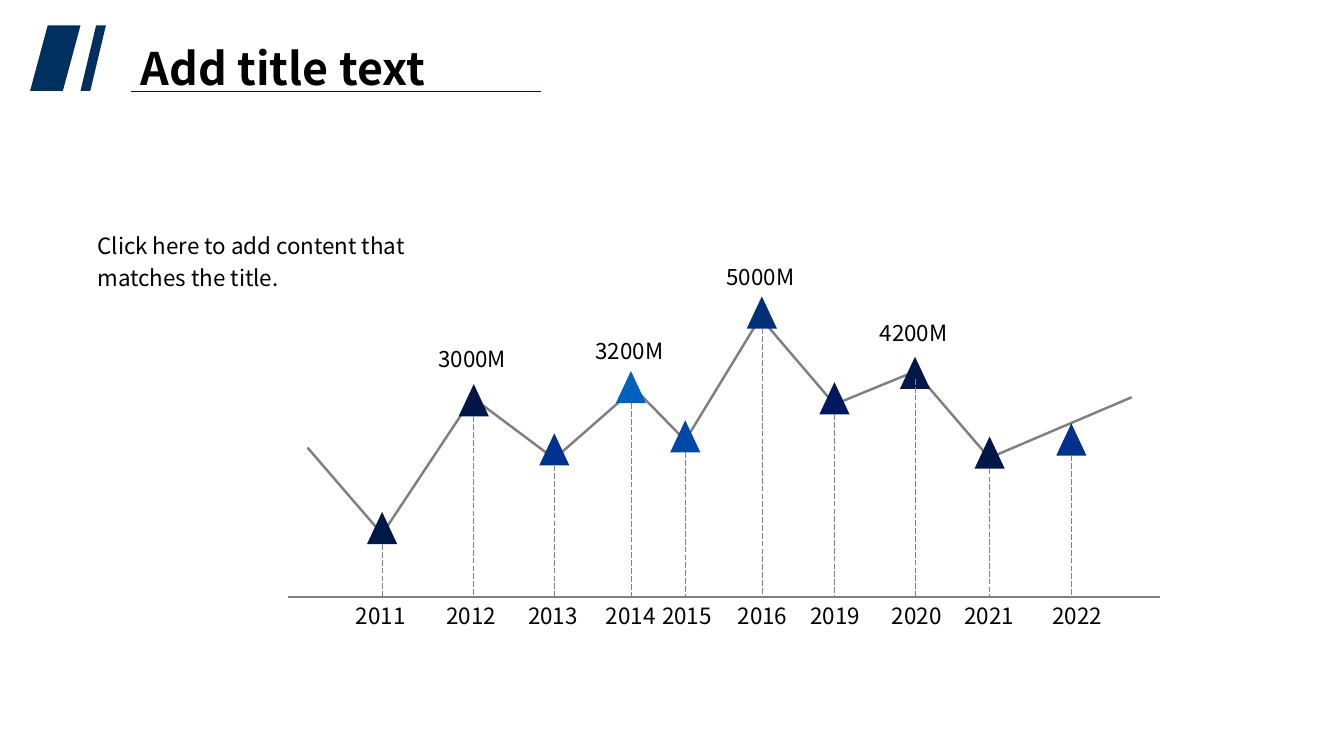
from itertools import pairwise

from lxml.etree import SubElement
from pptx import Presentation
from pptx.dml.color import RGBColor
from pptx.enum.dml import MSO_LINE
from pptx.enum.shapes import MSO_CONNECTOR, MSO_SHAPE
from pptx.enum.text import MSO_AUTO_SIZE
from pptx.oxml.ns import qn
from pptx.util import Cm, Pt

FONT = "Noto Sans CJK SC"
COLORS = {
    "black": "000000", "gray": "808080", "brand": "003060",
    "night": "001848", "ink": "001748", "deep": "001860", "navy": "003078",
    "royal": "003090", "blue": "0048A8", "bright": "0060C0",
}

# Lengths in cm
AXIS_Y = 15.04
MARKER_W, MARKER_H = 0.76, 0.81
LABEL_H = 1.02
# year, marker centre x, marker top, marker colour, left of year label
MARKERS = [
    ("2011", 9.63, 12.9, "night", 8.64),
    ("2012", 11.94, 9.68, "ink", 10.92),
    ("2013", 13.97, 10.92, "royal", 12.98),
    ("2014", 15.9, 9.35, "bright", 14.94),
    ("2015", 17.27, 10.59, "blue", 16.36),
    ("2016", 19.2, 7.47, "navy", 18.26),
    ("2019", 21.03, 9.63, "deep", 20.09),
    ("2020", 23.06, 8.99, "night", 22.15),
    ("2021", 24.94, 11.0, "ink", 23.98),
    ("2022", 27.0, 10.67, "royal", 26.19),
]
# Where a drop line starts inside its marker instead of at its base
DROP_TOPS = {"2020": 9.55}
TREND = [
    (7.75, 11.28), (9.63, 13.46), (11.91, 10.02), (13.97, 11.56),
    (15.99, 9.79), (17.27, 11.1), (19.16, 8.0), (21.03, 10.19),
    (23.06, 9.36), (24.93, 11.54), (28.52, 10.01),
]
# value, left, top
VALUES = [
    ("3000M", 10.72, 8.53), ("3200M", 14.68, 8.31),
    ("5000M", 17.98, 6.45), ("4200M", 21.84, 7.87),
]


def rgb(name):
    return RGBColor.from_string(COLORS[name])


def add_line(s, start, end, color="gray", width=1.75, dash=None):
    line = s.shapes.add_connector(
        MSO_CONNECTOR.STRAIGHT, *(Cm(v) for v in (*start, *end)))
    line.line.color.rgb = rgb(color)
    line.line.width = Pt(width)
    if dash:
        line.line.dash_style = dash
    SubElement(line._element.spPr, qn("a:effectLst"))


def add_solid(s, kind, box, color, adj=None):
    """Add a filled preset shape without outline."""
    sp = s.shapes.add_shape(kind, *(Cm(v) for v in box))
    sp.shadow.inherit = False
    sp.fill.solid()
    sp.fill.fore_color.rgb = rgb(color)
    sp.line.fill.background()
    if adj is not None:
        sp.adjustments[0] = adj


def add_text(s, text, box, size=16, bold=False, wrap=False, spacing=None,
             inset=(0.33, 0.18), auto_size=MSO_AUTO_SIZE.SHAPE_TO_FIT_TEXT):
    tf = s.shapes.add_textbox(*(Cm(v) for v in box)).text_frame
    tf.word_wrap = wrap
    tf.auto_size = auto_size
    tf.margin_left = tf.margin_right = Cm(inset[0])
    tf.margin_top = tf.margin_bottom = Cm(inset[1])
    p = tf.paragraphs[0]
    p.line_spacing = spacing
    r = p.add_run()
    r.text = text
    r.font.name = FONT
    r.font.size = Pt(size)
    r.font.bold = bold
    r.font.color.rgb = rgb("black")


def add_header(s):
    add_text(s, "Add title text", (3.3, 1.04, 12.83, 1.65), size=32, bold=True,
             wrap=True, spacing=0.9, inset=(0.25, 0.13),
             auto_size=MSO_AUTO_SIZE.NONE)
    for left, width, adj in ((0.76, 1.27, 0.349), (2.03, 0.64, 0.615)):
        add_solid(s, MSO_SHAPE.PARALLELOGRAM, (left, 0.64, width, 1.65),
                  "brand", adj)
    add_line(s, (3.3, 2.31), (13.64, 2.31), "night", 0.5)


def add_timeline(s):
    add_line(s, (7.26, AXIS_Y), (29.24, AXIS_Y), width=1.5)
    for start, end in pairwise(TREND):
        add_line(s, start, end)
    for year, x, top, color, label_left in MARKERS:
        add_solid(s, MSO_SHAPE.ISOSCELES_TRIANGLE,
                  (x - MARKER_W / 2, top, MARKER_W, MARKER_H), color)
        drop_top = DROP_TOPS.get(year, top + MARKER_H)
        add_line(s, (x, drop_top), (x, AXIS_Y), width=0.5,
                 dash=MSO_LINE.LONG_DASH)
        add_text(s, year, (label_left, 14.99, 2.05, LABEL_H))
    for value, left, top in VALUES:
        add_text(s, value, (left, top, 2.62, LABEL_H))


def main():
    prs = Presentation()
    prs.slide_width, prs.slide_height = Cm(33.87), Cm(19.05)
    s = prs.slides.add_slide(prs.slide_layouts[6])
    add_timeline(s)
    add_text(s, "Click here to add content that matches the title.",
             (2.13, 5.54, 10.19, 1.91), wrap=True, spacing=1.2)
    add_header(s)
    prs.save("out.pptx")


if __name__ == "__main__":
    main()
